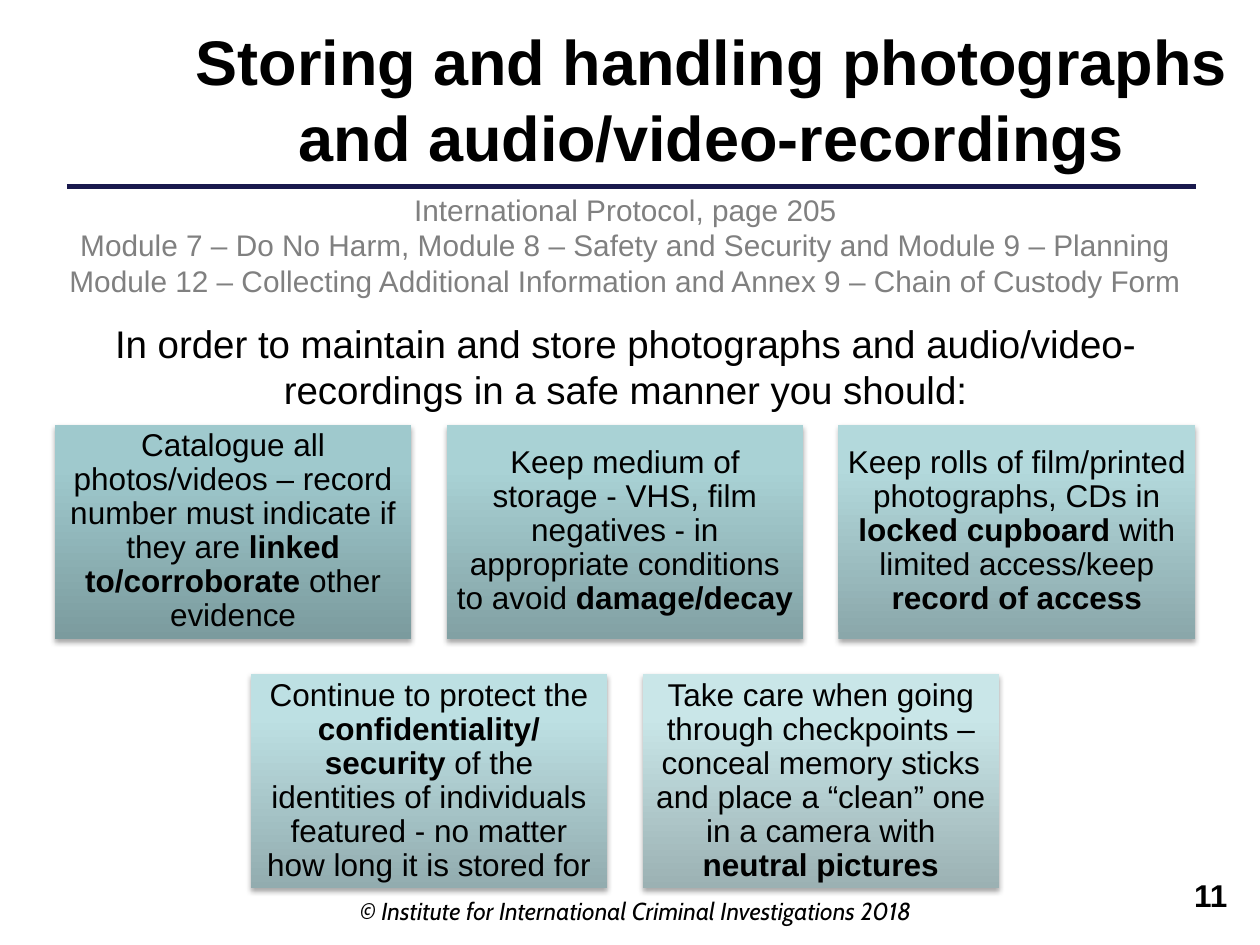
from dataclasses import dataclass

from lxml import etree
from pptx import Presentation
from pptx import util as u
from pptx.dml.color import RGBColor
from pptx.enum import shapes, text
from pptx.oxml import ns


@dataclass(frozen=True)
class Theme:
    font: str = "Arial"
    footer_font: str = "Cabin"
    ink: str = "000000"
    muted: str = "808080"
    rule: str = "19194D"
    title_size: int = 36
    intro_size: int = 22
    body_size: int = 18
    reference_size: int = 17
    footer_size: int = 14


@dataclass(frozen=True)
class Label:
    paragraphs: tuple[str, ...]
    left: float
    top: float
    width: float
    height: float
    size: int
    color: str = "000000"
    font: str = "Arial"
    bold: bool = False
    italic: bool = False
    align: text.PP_ALIGN = text.PP_ALIGN.CENTER


@dataclass(frozen=True)
class Advice:
    pieces: tuple[str, ...]  # regular and bold wording in turn
    bottom: str
    upper: str
    top: str


THEME = Theme()

# Card grid: every row is centred on the same axis
CARD_WIDTH, CARD_HEIGHT, CARD_GAP = 2.83, 1.7, 0.28
GRID_CENTER, GRID_TOP, CARD_INSET = 4.96, 3.37, 0.07

LABELS = (
    Label(("Storing and handling photographs and audio/video-recordings",),
          1.3, 0.13, 8.7, 1.31, THEME.title_size, THEME.ink, bold=True),
    Label(("International Protocol, page 205",
           "Module 7 – Do No Harm, Module 8 – Safety and Security and Module 9 – Planning "
           "Module 12 – Collecting Additional Information and Annex 9 – Chain of Custody Form"),
          0.2, 1.47, 9.53, 1.0, THEME.reference_size, THEME.muted),
    Label(("In order to maintain and store photographs and audio/video-recordings "
           "in a safe manner you should:",),
          0.12, 2.49, 9.69, 0.84, THEME.intro_size, THEME.ink),
    Label(("© Institute for International Criminal Investigations 2018",),
          2.72, 7.06, 4.65, 0.34, THEME.footer_size, THEME.ink, THEME.footer_font, italic=True),
    Label(("11",), 7.28, 6.9, 2.56, 0.52, THEME.body_size, THEME.ink, bold=True,
          align=text.PP_ALIGN.RIGHT),
)

ADVICE_ROWS = (
    (
        Advice(("Catalogue all photos/videos – record number must indicate if they are ",
                "linked to/corroborate ", "other evidence"),
               "7B9B9E", "9FC9CD", "9FCBCF"),
        Advice(("Keep medium of storage - VHS, film negatives - in appropriate "
                "conditions to avoid ", "damage/decay"),
               "82A1A4", "A9D2D5", "A8D3D7"),
        Advice(("Keep rolls of film/printed photographs, CDs in ", "locked cupboard ",
                "with limited access/keep ", "record of access"),
               "8AA7AA", "B3D9DC", "B3DBDE"),
    ),
    (
        Advice(("Continue to protect the ", "confidentiality/ security ",
                "of the identities of individuals featured - no matter how long "
                "it is stored for"),
               "92ACAF", "BDE0E3", "BEE1E4"),
        Advice(("Take care when going through checkpoints – conceal memory sticks and "
                "place a “clean” one in a camera with ", "neutral pictures"),
               "9BB1B3", "C9E6E8", "C9E8EA"),
    ),
)


def add_color(parent, color: str):
    return etree.SubElement(parent, ns.qn("a:srgbClr"), val=color)


def style_font(font, name: str, size: int, color: str, bold: bool, italic: bool = False) -> None:
    font.name, font.size = name, u.Pt(size)
    font.bold, font.italic = bold, italic
    font.color.rgb = RGBColor.from_string(color)


def add_label(slide, label: Label) -> None:
    box = slide.shapes.add_textbox(*map(u.Inches, (label.left, label.top, label.width, label.height)))
    frame = box.text_frame
    frame.word_wrap = True
    frame.text = "\n".join(label.paragraphs)
    for paragraph in frame.paragraphs:
        paragraph.alignment = label.align
        for run in paragraph.runs:
            style_font(run.font, label.font, label.size, label.color, label.bold, label.italic)


def add_rule(slide) -> None:
    rule = slide.shapes.add_connector(shapes.MSO_CONNECTOR.STRAIGHT, u.Inches(0.53),
                                      u.Inches(1.48), u.Inches(9.49), u.Inches(1.48))
    rule.line.color.rgb = RGBColor.from_string(THEME.rule)
    rule.line.width = u.Pt(2.5)
    etree.SubElement(rule._element.spPr, ns.qn("a:effectLst"))


def fill_gradient(card, advice: Advice) -> None:
    card.fill.gradient()
    card.fill.gradient_angle = 90
    stops = card._element.spPr.find(".//" + ns.qn("a:gsLst"))
    for stop in list(stops):
        stops.remove(stop)
    for percent, color in ((0, advice.bottom), (80, advice.upper), (100, advice.top)):
        add_color(etree.SubElement(stops, ns.qn("a:gs"), pos=str(percent * 1000)), color)


def add_shadow(card) -> None:
    card.shadow.inherit = False
    effects = card._element.spPr.find(ns.qn("a:effectLst"))
    shadow = etree.SubElement(effects, ns.qn("a:outerShdw"), blurRad=str(u.Pt(3.1)),
                              dist=str(u.Pt(1.8)), dir=str(90 * 60000), rotWithShape="0")
    etree.SubElement(add_color(shadow, THEME.ink), ns.qn("a:alpha"), val="35000")


def add_card(slide, advice: Advice, left: float, top: float) -> None:
    card = slide.shapes.add_shape(shapes.MSO_SHAPE.RECTANGLE,
                                  *map(u.Inches, (left, top, CARD_WIDTH, CARD_HEIGHT)))
    fill_gradient(card, advice)
    card.line.fill.background()
    add_shadow(card)

    frame = card.text_frame
    frame.word_wrap = True
    frame.vertical_anchor = text.MSO_ANCHOR.MIDDLE
    frame.margin_left = frame.margin_right = u.Inches(CARD_INSET)
    frame.margin_top = frame.margin_bottom = u.Inches(CARD_INSET)
    paragraph = frame.paragraphs[0]
    paragraph.alignment = text.PP_ALIGN.CENTER
    paragraph.line_spacing = 0.9
    for index, piece in enumerate(advice.pieces):
        run = paragraph.add_run()
        run.text = piece
        style_font(run.font, THEME.font, THEME.body_size, THEME.ink, bold=index % 2 == 1)


def main() -> None:
    deck = Presentation()
    deck.slide_width, deck.slide_height = u.Inches(10), u.Inches(7.5)
    slide = deck.slides.add_slide(deck.slide_layouts[6])

    # Heading rule, texts and footer
    add_rule(slide)
    for label in LABELS:
        add_label(slide, label)

    # Advice cards
    for row, cards in enumerate(ADVICE_ROWS):
        row_width = len(cards) * (CARD_WIDTH + CARD_GAP) - CARD_GAP
        for column, advice in enumerate(cards):
            left = GRID_CENTER - row_width / 2 + column * (CARD_WIDTH + CARD_GAP)
            add_card(slide, advice, left, GRID_TOP + row * (CARD_HEIGHT + CARD_GAP))

    deck.save("out.pptx")


if __name__ == "__main__":
    main()
